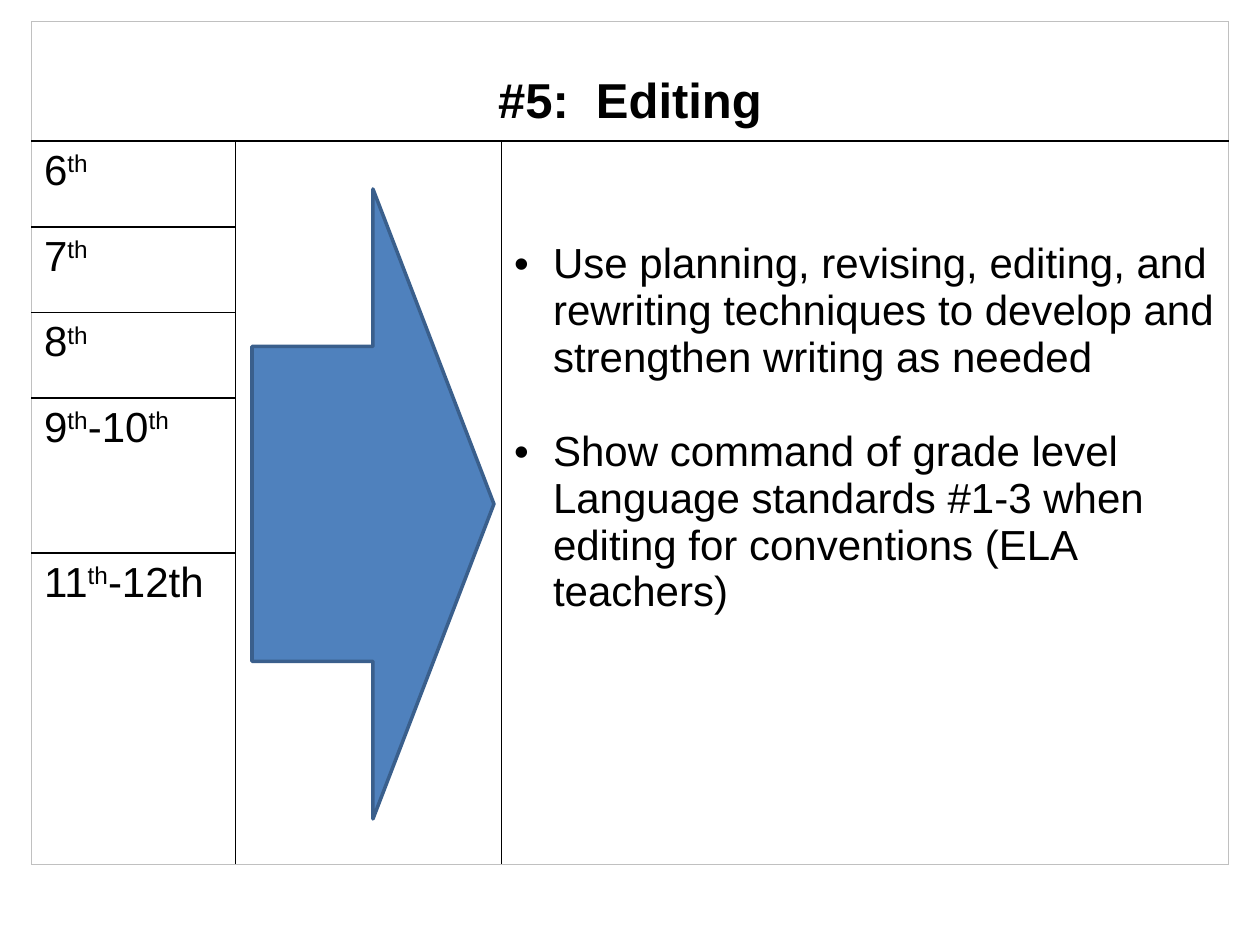
from dataclasses import dataclass

from lxml.etree import SubElement
from pptx import Presentation
from pptx.dml.color import RGBColor
from pptx.enum.shapes import MSO_SHAPE
from pptx.enum.text import PP_ALIGN
from pptx.oxml.ns import qn
from pptx.util import Inches, Pt


@dataclass(frozen=True)
class Theme:
    font: str = "Arial"
    title_size: int = 28
    body_size: int = 24
    ink: str = "000000"
    frame: str = "C0C0C0"
    arrow_fill: str = "4F81BD"
    arrow_line: str = "3A5F8C"


THEME = Theme()

TITLE = "#5:  Editing"
# Every second piece of a grade is raised
GRADES = [
    ["6", "th"],
    ["7", "th"],
    ["8", "th"],
    ["9", "th", "-10", "th"],
    ["11", "th", "-12th"],
]
SKILLS = [
    "Use planning, revising, editing, and rewriting techniques to develop "
    "and strengthen writing as needed",
    "Show command of grade level Language standards #1-3 when editing for "
    "conventions (ELA teachers)",
]
COLUMN_WIDTHS = [1.62, 2.11, 5.77]
ROW_HEIGHTS = [0.95, 0.68, 0.68, 0.68, 1.23, 2.47]


def add_span(para, text, size=THEME.body_size, bold=False, raised=False):
    span = para.add_run()
    span.text = text
    font = span.font
    font.name, font.size, font.bold = THEME.font, Pt(size), bold
    font.color.rgb = RGBColor.from_string(THEME.ink)
    if raised:
        span._r.get_or_add_rPr().set("baseline", "30000")


def add_bullet(para):
    properties = para._p.get_or_add_pPr()
    properties.set("marL", str(Inches(0.31)))
    properties.set("indent", str(-Inches(0.31)))
    SubElement(properties, qn("a:buFont"), typeface=THEME.font)
    SubElement(properties, qn("a:buChar"), char="•")


def draw_border(cell, side, color, width):
    line = SubElement(cell._tc.get_or_add_tcPr(), qn(f"a:ln{side}"), w=str(Pt(width)))
    fill = SubElement(line, qn("a:solidFill"))
    SubElement(fill, qn("a:srgbClr"), val=color)


def style_cell(cell, row, column):
    """Pale outer frame, black inner rules, no fill."""
    outer_edges = {
        "L": column == 0,
        "R": column == len(COLUMN_WIDTHS) - 1 or row == 0,
        "T": row == 0,
        "B": row == len(ROW_HEIGHTS) - 1 or (row > 0 and column > 0),
    }
    for side, outer in outer_edges.items():
        draw_border(cell, side, *((THEME.frame, 0.5) if outer else (THEME.ink, 1)))
    cell.fill.background()


def add_standard_table(page, left, top, width, height):
    frame = page.shapes.add_table(
        len(ROW_HEIGHTS), len(COLUMN_WIDTHS),
        Inches(left), Inches(top), Inches(width), Inches(height))
    table = frame.table
    table.first_row = table.horz_banding = False
    for column, size in zip(table.columns, COLUMN_WIDTHS):
        column.width = Inches(size)
    for row, size in zip(table.rows, ROW_HEIGHTS):
        row.height = Inches(size)

    last_row, last_column = len(ROW_HEIGHTS) - 1, len(COLUMN_WIDTHS) - 1
    for row in range(last_row + 1):
        for column in range(last_column + 1):
            style_cell(table.cell(row, column), row, column)
    table.cell(0, 0).merge(table.cell(0, last_column))
    for column in range(1, last_column + 1):
        table.cell(1, column).merge(table.cell(last_row, column))

    # Title row
    title = table.cell(0, 0)
    title.margin_top = Inches(0.42)
    para = title.text_frame.paragraphs[0]
    para.alignment = PP_ALIGN.CENTER
    add_span(para, TITLE, THEME.title_size, bold=True)

    # Grade column
    for row, pieces in enumerate(GRADES, start=1):
        para = table.cell(row, 0).text_frame.paragraphs[0]
        for index, piece in enumerate(pieces):
            add_span(para, piece, raised=index % 2 == 1)

    # Skills column
    skills = table.cell(1, last_column)
    skills.margin_top = Inches(0.79)
    for index, text in enumerate(SKILLS):
        if index == 0:
            para = skills.text_frame.paragraphs[0]
        else:
            para = skills.text_frame.add_paragraph()
            para.space_before = Pt(27)
        add_bullet(para)
        add_span(para, text)


def add_grade_arrow(page, left, top, width, height):
    arrow = page.shapes.add_shape(
        MSO_SHAPE.RIGHT_ARROW,
        Inches(left), Inches(top), Inches(width), Inches(height))
    arrow.shadow.inherit = False
    arrow.fill.solid()
    arrow.fill.fore_color.rgb = RGBColor.from_string(THEME.arrow_fill)
    arrow.line.color.rgb = RGBColor.from_string(THEME.arrow_line)
    arrow.line.width = Pt(2)


def main():
    deck = Presentation()
    deck.slide_width, deck.slide_height = Inches(10), Inches(7.5)
    page = deck.slides.add_slide(deck.slide_layouts[6])
    add_standard_table(page, 0.25, 0.17, sum(COLUMN_WIDTHS), sum(ROW_HEIGHTS))
    add_grade_arrow(page, 2, 1.5, 1.92, 5)
    deck.save("out.pptx")


if __name__ == "__main__":
    main()
